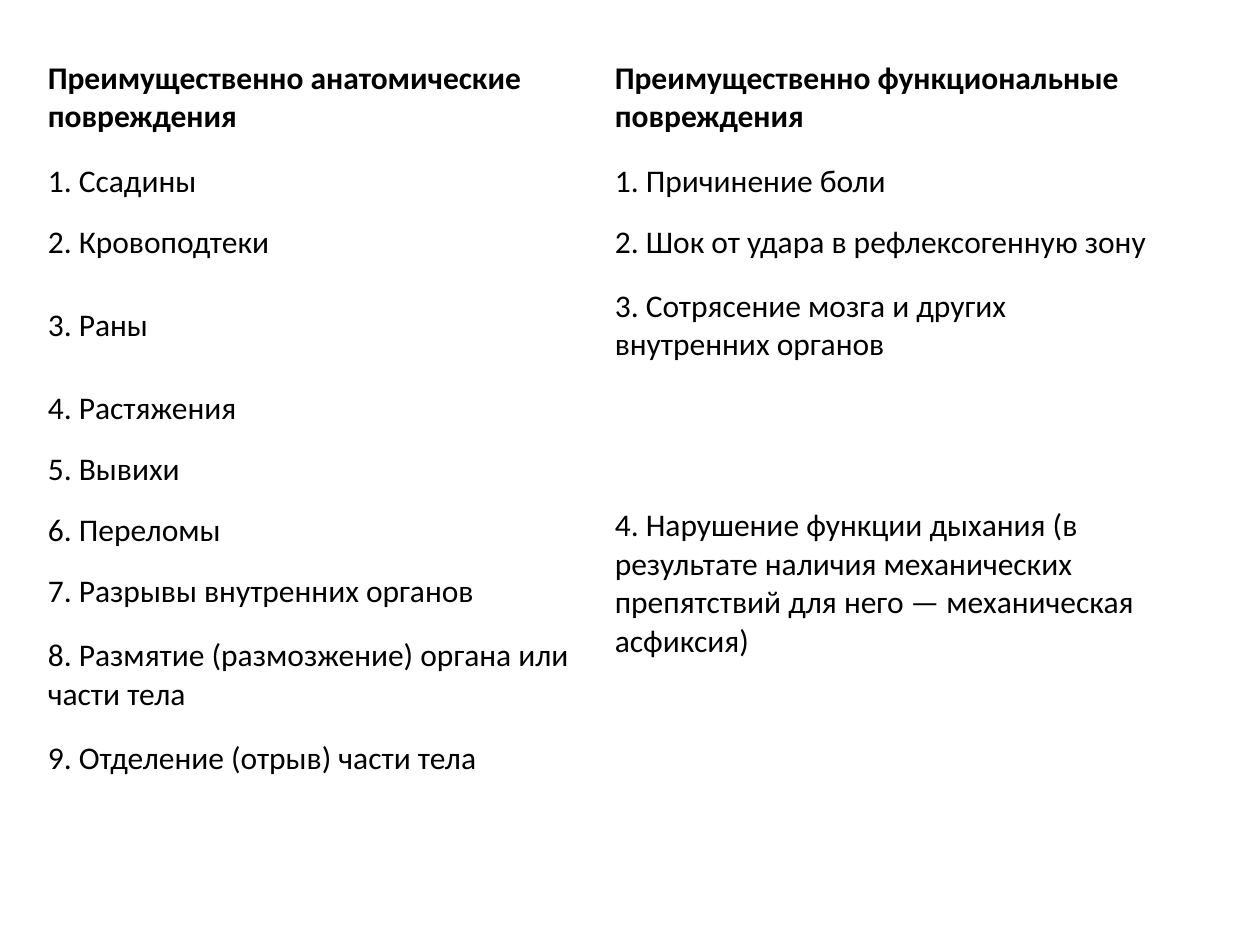
from pptx import Presentation
from pptx import util as u
from pptx.dml import color
from pptx.enum import text

ANATOMICAL = [
    "Преимущественно анатомические повреждения",
    "1. Ссадины",
    "2. Кровоподтеки",
    "3. Раны",
    "4. Растяжения",
    "5. Вывихи",
    "6. Переломы",
    "7. Разрывы внутренних органов",
    "8. Размятие (размозжение) органа или части тела",
    "9. Отделение (отрыв) части тела",
]
FUNCTIONAL = [
    "Преимущественно функциональные повреждения",
    "1. Причинение боли",
    "2. Шок от удара в рефлексогенную зону",
    "3. Сотрясение мозга и других внутренних органов",
    "4. Нарушение функции дыхания (в результате наличия механических "
    "препятствий для него — механическая асфиксия)",
]
TWO_LINE_ROWS = {0, 3, 8}


def rgb(value):
    return color.RGBColor.from_string(value)


class SlideBuilder:
    font_name = "Calibri"
    font_size = u.Pt(18)
    text_color = "000000"

    def __init__(self, slide):
        self.slide = slide

    def cell(self, cell, content, bold):
        cell.vertical_anchor = text.MSO_ANCHOR.MIDDLE
        cell.text_frame.text = content
        for run in cell.text_frame.paragraphs[0].runs:
            run.font.name = self.font_name
            run.font.size = self.font_size
            run.font.bold = bold
            run.font.color.rgb = rgb(self.text_color)

    def table(self, left, top, column_width, row_heights, columns):
        """Fill the columns; a short column's last cell spans the rows left."""
        row_count = len(row_heights)
        table = self.slide.shapes.add_table(
            row_count, len(columns), left, top,
            column_width * len(columns), sum(row_heights)).table
        table.first_row = table.horz_banding = False
        for row, height in zip(table.rows, row_heights):
            row.height = height
        for cell in table.iter_cells():
            cell.fill.background()
        for index, entries in enumerate(columns):
            table.columns[index].width = column_width
            for row_index, content in enumerate(entries):
                self.cell(table.cell(row_index, index), content, row_index == 0)
            if len(entries) < row_count:
                last_entry = table.cell(len(entries) - 1, index)
                last_entry.merge(table.cell(row_count - 1, index))


def main():
    presentation = Presentation()
    presentation.slide_width = u.Cm(25.4)
    presentation.slide_height = u.Cm(19.05)
    slide = presentation.slides.add_slide(presentation.slide_layouts[6])
    builder = SlideBuilder(slide)

    # Two kinds of injuries side by side
    row_heights = [u.Cm(2.13 if row in TWO_LINE_ROWS else 1.23)
                   for row in range(len(ANATOMICAL))]
    builder.table(u.Cm(0.71), u.Cm(0.91), u.Cm(11.43), row_heights,
                  [ANATOMICAL, FUNCTIONAL])

    presentation.save("out.pptx")


if __name__ == "__main__":
    main()
